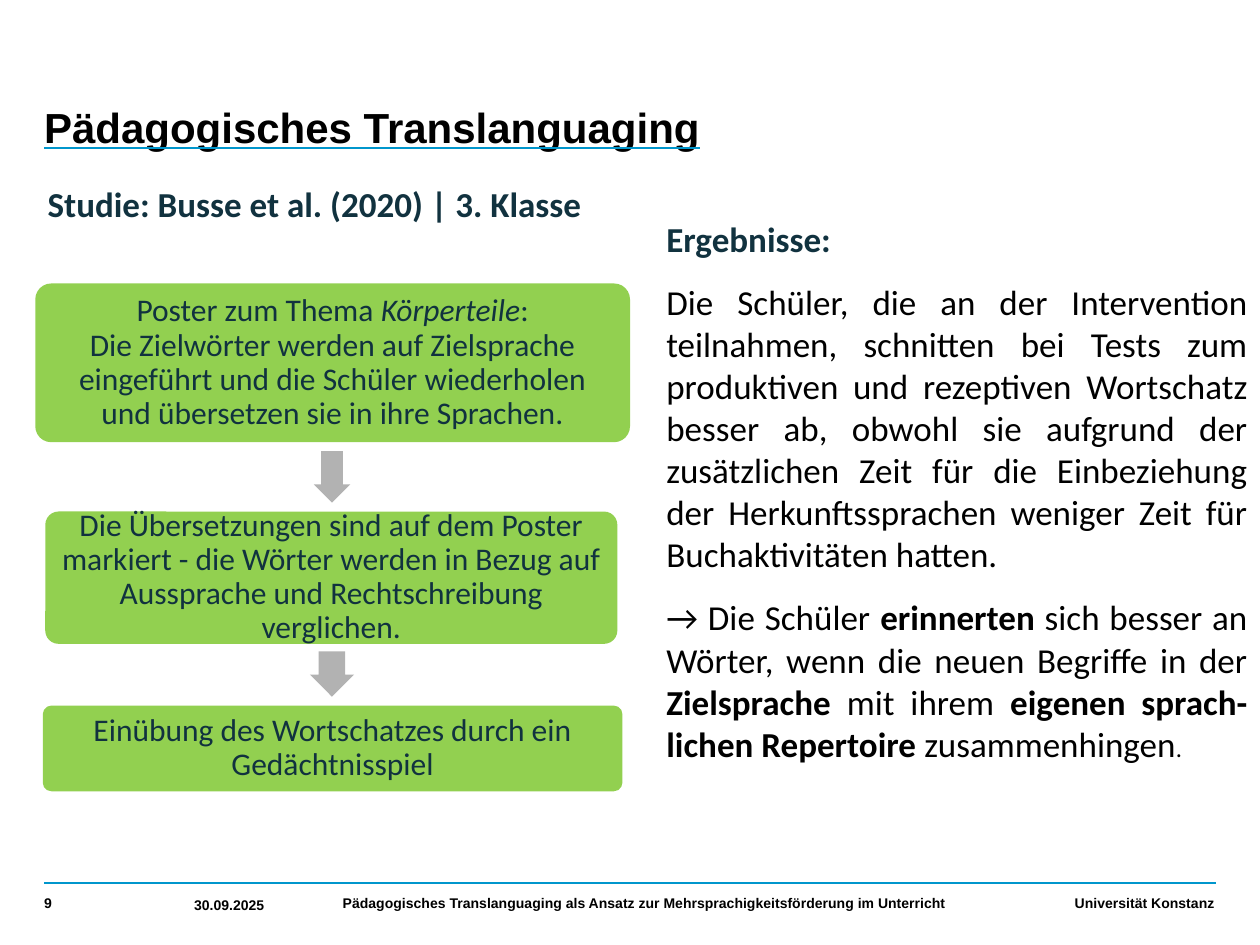
from dataclasses import dataclass

from lxml.etree import SubElement
from pptx import Presentation
from pptx.dml.color import RGBColor
from pptx.enum.shapes import MSO_CONNECTOR as Connector, MSO_SHAPE as Preset
from pptx.enum.text import MSO_ANCHOR as Anchor, PP_ALIGN as Align
from pptx.oxml import parse_xml
from pptx.oxml.ns import nsdecls, qn
from pptx.util import Pt

PX = 9144  # 100 px to the inch
BLACK, NAVY, BLUE, GREEN, GREY = "000000", "11323F", "0096CC", "92D050", "B2B2B2"


@dataclass(frozen=True)
class Area:
    left: int
    top: int
    width: int
    height: int

    def emu(self) -> tuple[int, ...]:
        return tuple(n * PX for n in (self.left, self.top, self.width, self.height))


@dataclass(frozen=True)
class Style:
    size: int
    color: str = BLACK
    font: str = "Calibri"
    bold: bool = False


@dataclass(frozen=True)
class Span:
    text: str
    bold: bool = False
    italic: bool = False
    size: int = 0


@dataclass(frozen=True)
class Step:
    area: Area
    spans: list[Span]


@dataclass(frozen=True)
class Label:
    area: Area
    text: str
    align: Align = Align.LEFT


HEADING = Style(20, NAVY, bold=True)
BODY = Style(20)
STEP = Style(18, NAVY)
TITLE = Style(24, font="Arial", bold=True)
FOOTER = Style(8, font="Arial", bold=True)

STEPS = [
    Step(Area(28, 225, 472, 126), [
        Span("Poster zum Thema "), Span("Körperteile", italic=True), Span(":"), Span("\n"),
        Span("Die Zielwörter werden auf Zielsprache eingeführt und die Schüler "
             "wiederholen und übersetzen sie in ihre Sprachen.")]),
    Step(Area(36, 406, 454, 105), [
        Span("Die Übersetzungen sind auf dem Poster markiert - die Wörter werden in Bezug "
             "auf Aussprache und Rechtschreibung verglichen.")]),
    Step(Area(34, 560, 460, 68), [
        Span("Einübung des Wortschatzes durch ein Gedächtnisspiel")]),
]
ARROWS = [Area(249, 358, 29, 41), Area(246, 517, 35, 36)]
RESULTS = [
    (HEADING, [Span("Ergebnisse:")]),
    (BODY, [Span(
        "Die Schüler, die an der Intervention teilnahmen, schnitten bei Tests zum "
        "produktiven und rezeptiven Wortschatz besser ab, obwohl sie aufgrund der "
        "zusätzlichen Zeit für die Einbeziehung der Herkunftssprachen weniger Zeit "
        "für Buchaktivitäten hatten.")]),
    (BODY, [
        Span("→ Die Schüler "), Span("erinnerten", bold=True),
        Span(" sich besser an Wörter, wenn die neuen Begriffe in der "),
        Span("Zielsprache", bold=True), Span(" mit ihrem "),
        Span("eigenen sprach-lichen Repertoire ", bold=True),
        Span("zusammenhingen"), Span(".", size=14)]),
]
FOOTERS = [
    Label(Area(35, 706, 102, 23), "9"),
    Label(Area(154, 706, 102, 25), "30.09.2025"),
    Label(Area(272, 704, 504, 25),
          "Pädagogisches Translanguaging als Ansatz zur Mehrsprachigkeitsförderung im Unterricht"),
    Label(Area(626, 706, 338, 23), "Universität Konstanz", Align.RIGHT),
]


def rgb(code: str) -> RGBColor:
    return RGBColor.from_string(code)


def set_frame(frame, anchor: Anchor, left: int, top: int, right: int, bottom: int) -> None:
    """Wrap the text, anchor it and set its margins in px."""
    frame.word_wrap = True
    frame.vertical_anchor = anchor
    frame.margin_left, frame.margin_top = left * PX, top * PX
    frame.margin_right, frame.margin_bottom = right * PX, bottom * PX


def format_run(run, style: Style, span: Span) -> None:
    font = run.font
    font.name = style.font
    font.size = Pt(span.size or style.size)
    font.bold = style.bold or span.bold
    font.italic = span.italic
    font.color.rgb = rgb(style.color)


def write(para, spans: list[Span], style: Style, align: Align = Align.LEFT) -> None:
    para.alignment = align
    for span in spans:
        if span.text == "\n":
            para.add_line_break()
            continue
        run = para.add_run()
        run.text = span.text
        format_run(run, style, span)


def add_text(page, area: Area, text: str, style: Style, anchor: Anchor = Anchor.TOP,
             margins: tuple[int, int, int, int] = (10, 5, 10, 5), align: Align = Align.LEFT):
    box = page.shapes.add_textbox(*area.emu())
    set_frame(box.text_frame, anchor, *margins)
    para = box.text_frame.paragraphs[0]
    write(para, [Span(text)], style, align)
    return para


def add_filled(page, preset: Preset, area: Area, fill: str, adjustments: list[float]):
    shape = page.shapes.add_shape(preset, *area.emu())
    shape.shadow.inherit = False
    shape.fill.solid()
    shape.fill.fore_color.rgb = rgb(fill)
    shape.line.fill.background()
    for index, value in enumerate(adjustments):
        shape.adjustments[index] = value
    return shape


def add_step(page, step: Step) -> None:
    frame = add_filled(page, Preset.ROUNDED_RECTANGLE, step.area, GREEN, [0.1]).text_frame
    set_frame(frame, Anchor.MIDDLE, 10, 10, 10, 10)
    para = frame.paragraphs[0]
    para.line_spacing = 0.9
    write(para, step.spans, STEP, Align.CENTER)


def add_title(page) -> None:
    para = add_text(page, Area(35, 44, 929, 118), "Pädagogisches Translanguaging",
                    TITLE, Anchor.MIDDLE, (0, 0, 0, 0))
    para.line_spacing = 0.9
    font = para.runs[0].font
    font.underline = True
    underline = parse_xml(f'<a:uFill {nsdecls("a")}><a:solidFill>'
                          f'<a:srgbClr val="{BLUE}"/></a:solidFill></a:uFill>')
    para.runs[0]._r.rPr.find(qn("a:solidFill")).addnext(underline)


def add_results(page) -> None:
    frame = page.shapes.add_textbox(*Area(519, 168, 481, 552).emu()).text_frame
    set_frame(frame, Anchor.TOP, 10, 5, 10, 5)
    for index, (style, spans) in enumerate(RESULTS):
        para = frame.add_paragraph() if index else frame.paragraphs[0]
        if index:
            para.space_before = Pt(12)
        write(para, spans, style, Align.JUSTIFY)


def add_footer(page) -> None:
    rule = page.shapes.add_connector(Connector.STRAIGHT, 35 * PX, 701 * PX, 965 * PX, 701 * PX)
    rule.line.color.rgb = rgb(BLUE)
    rule.line.width = Pt(1)
    SubElement(rule._element.spPr, qn("a:effectLst"))
    for label in FOOTERS:
        add_text(page, label.area, label.text, FOOTER, Anchor.BOTTOM, (0, 0, 0, 6), label.align)


def main() -> None:
    deck = Presentation()
    deck.slide_width, deck.slide_height = 1000 * PX, 750 * PX
    page = deck.slides.add_slide(deck.slide_layouts[6])
    add_footer(page)
    add_title(page)
    for step in STEPS:
        add_step(page, step)
    for area in ARROWS:
        add_filled(page, Preset.DOWN_ARROW, area, GREY, [0.6, 0.5])
    add_results(page)
    add_text(page, Area(28, 140, 592, 74), "Studie: Busse et al. (2020) | 3. Klasse", HEADING)
    deck.save("out.pptx")


if __name__ == "__main__":
    main()
